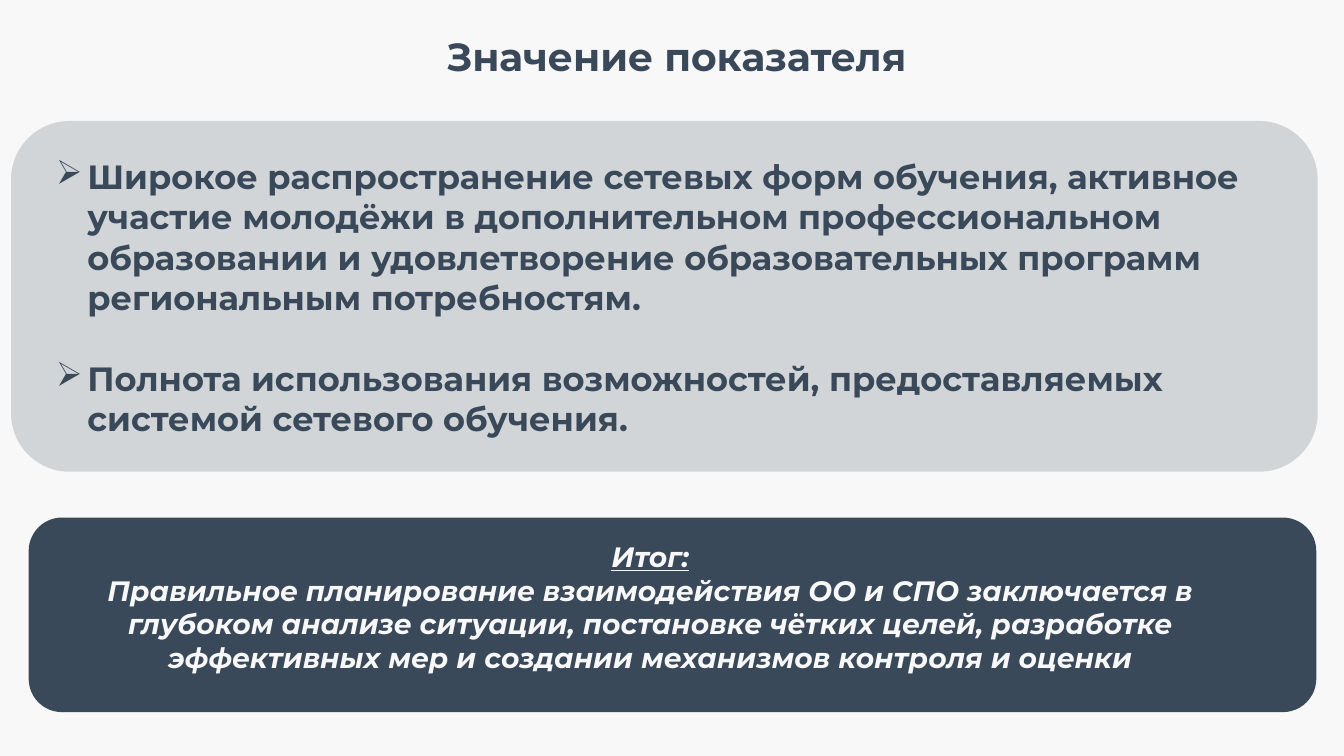
from dataclasses import dataclass

from lxml import etree
from pptx import Presentation
from pptx.dml.color import RGBColor
from pptx.enum.shapes import MSO_SHAPE
from pptx.enum.text import MSO_ANCHOR, PP_ALIGN
from pptx.oxml.ns import qn
from pptx.util import Emu, Pt

ROUNDED = MSO_SHAPE.ROUNDED_RECTANGLE
MIDDLE, TOP = MSO_ANCHOR.MIDDLE, MSO_ANCHOR.TOP
CENTER, LEFT = PP_ALIGN.CENTER, PP_ALIGN.LEFT

PX = 9144  # 100 px to the inch
FONT = "Montserrat"
SLATE, PALE = "394959", "F8F8F8"
BULLET, INDENT = "➢", 31


@dataclass
class Box:
    x: int
    y: int
    w: int
    h: int


@dataclass
class Panel:
    box: Box
    opacity: int = 100  # percent
    line: float = 0  # points


@dataclass
class Para:
    text: str
    underline: bool = False
    bullet: bool = False
    after: int = 0  # points


@dataclass
class TextBlock:
    box: Box
    paras: list[Para]
    size: int
    color: str
    align: PP_ALIGN = CENTER
    italic: bool = False
    rounded: bool = True


PANELS = [
    Panel(Box(11, 120, 1296, 348), opacity=20),
    Panel(Box(30, 515, 1274, 190), line=2.25),
]

TEXTS = [
    TextBlock(Box(16, 27, 1310, 57), [Para("Значение показателя")], 28, SLATE, rounded=False),
    TextBlock(Box(16, 522, 1258, 160), [
        Para("Итог:", underline=True),
        Para("Правильное планирование взаимодействия ОО и СПО заключается в глубоком "
             "анализе ситуации, постановке чётких целей, разработке эффективных мер "
             "и создании механизмов контроля и оценки"),
    ], 20, PALE, italic=True),
    TextBlock(Box(30, 133, 1258, 324), [
        Para("Широкое распространение сетевых форм обучения, активное участие молодёжи "
             "в дополнительном профессиональном образовании и удовлетворение "
             "образовательных программ региональным потребностям.", bullet=True, after=29),
        Para("Полнота использования возможностей, предоставляемых системой сетевого "
             "обучения.", bullet=True),
    ], 24, SLATE, LEFT),
]


def px(n: int) -> Emu:
    return Emu(n * PX)


def rgb(color: str) -> RGBColor:
    return RGBColor.from_string(color)


def place(box: Box) -> list[Emu]:
    return [px(n) for n in (box.x, box.y, box.w, box.h)]


def add_rounded(slide, box: Box):
    s = slide.shapes.add_shape(ROUNDED, *place(box))
    s.shadow.inherit = False
    s.fill.background()
    s.line.fill.background()
    return s


def add_panel(slide, panel: Panel) -> None:
    s = add_rounded(slide, panel.box)
    s.fill.solid()
    s.fill.fore_color.rgb = rgb(SLATE)
    if panel.opacity < 100:
        clr = s._element.spPr.find(qn("a:solidFill")).find(qn("a:srgbClr"))
        etree.SubElement(clr, qn("a:alpha"), val=str(panel.opacity * 1000))
    if panel.line:
        s.line.color.rgb = rgb(SLATE)
        s.line.width = Pt(panel.line)


def add_bullet(p) -> None:
    pPr = p._p.get_or_add_pPr()
    pPr.set("marL", str(px(INDENT)))
    pPr.set("indent", str(-px(INDENT)))
    etree.SubElement(pPr, qn("a:buChar"), char=BULLET)


def add_text(slide, block: TextBlock) -> None:
    if block.rounded:
        s = add_rounded(slide, block.box)
    else:
        s = slide.shapes.add_textbox(*place(block.box))
    tf = s.text_frame
    tf.word_wrap = True
    tf.vertical_anchor = MIDDLE if block.rounded else TOP
    for i, para in enumerate(block.paras):
        p = tf.add_paragraph() if i else tf.paragraphs[0]
        p.alignment = block.align
        if para.after:
            p.space_after = Pt(para.after)
        if para.bullet:
            add_bullet(p)
        r = p.add_run()
        r.text = para.text
        font = r.font
        font.name, font.size, font.bold = FONT, Pt(block.size), True
        font.italic, font.underline = block.italic, para.underline
        font.color.rgb = rgb(block.color)


def main() -> None:
    prs = Presentation()
    prs.slide_width, prs.slide_height = px(1333), px(750)
    slide = prs.slides.add_slide(prs.slide_layouts[6])
    slide.background.fill.solid()
    slide.background.fill.fore_color.rgb = rgb(PALE)

    # Panels behind, text in front
    for panel in PANELS:
        add_panel(slide, panel)
    for block in TEXTS:
        add_text(slide, block)

    prs.save("out.pptx")


if __name__ == "__main__":
    main()
